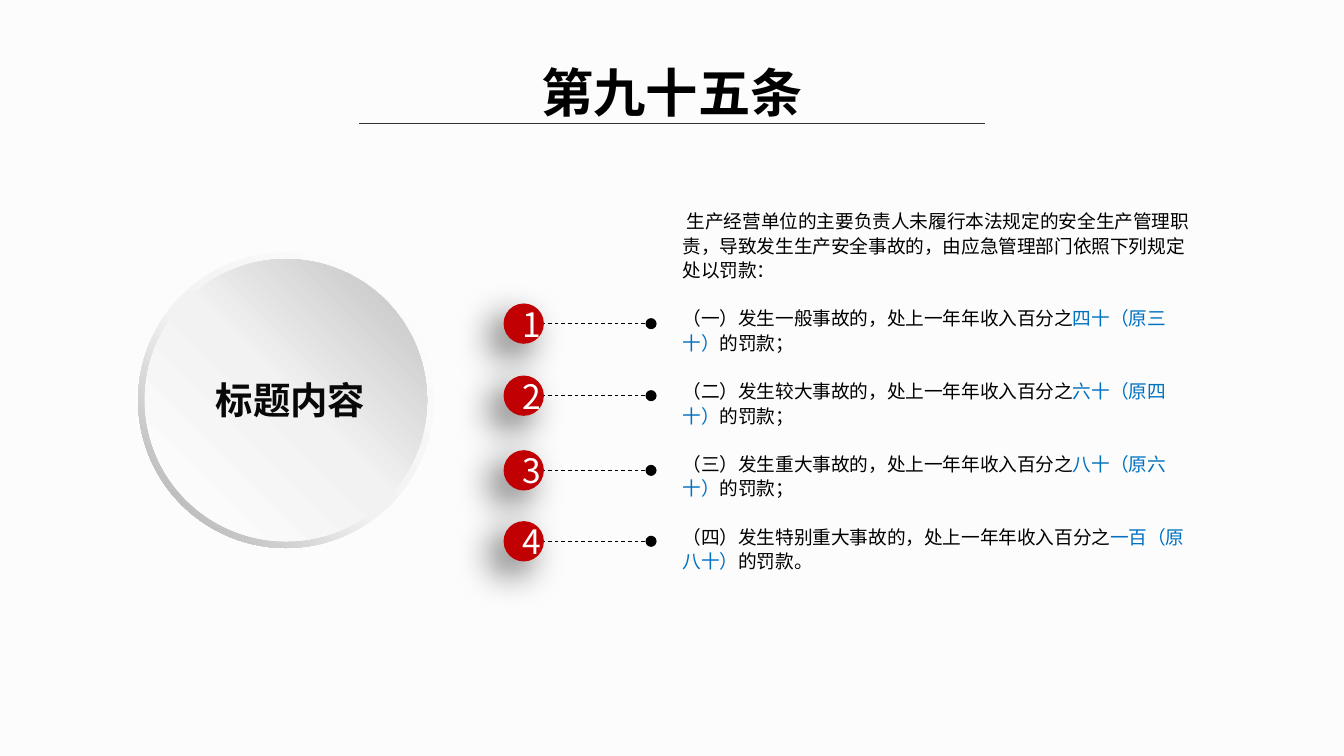
import pptx
import pptx.util
import pptx.dml.color
import pptx.enum.dml
import pptx.enum.shapes
import pptx.enum.text
import pptx.oxml
import pptx.oxml.ns
import lxml.etree

Pt = pptx.util.Pt
qn = pptx.oxml.ns.qn
Shape = pptx.enum.shapes.MSO_SHAPE
Align = pptx.enum.text.PP_ALIGN
FONT = "Noto Sans CJK SC"
COLORS = {
    "back": "FCFCFC", "text": "000000", "label": "080808", "rule": "333333",
    "red": "C00002", "blue": "0070C0", "white": "FFFFFF",
    "pale": "F2F2F2", "gray": "A6A6A6", "silver": "BFBFBF",
}

LEAD = "生产经营单位的主要负责人未履行本法规定的安全生产管理职责，导致发生生产安全事故的，由应急管理部门依照下列规定处以罚款："
# Case, fine, closing mark
FINES = [
    ("（一）发生一般事故的", "四十（原三十）", "；"),
    ("（二）发生较大事故的", "六十（原四十）", "；"),
    ("（三）发生重大事故的", "八十（原六十）", "；"),
    ("（四）发生特别重大事故的", "一百（原八十）", "。"),
]


def color(name):
    return pptx.dml.color.RGBColor.from_string(COLORS[name])


def style(run, size, hue, bold=False):
    font = run.font
    font.size, font.bold, font.name = Pt(size), bold, FONT
    font.color.rgb = color(hue)
    east = lxml.etree.SubElement(font._element, qn("a:ea"))
    east.set("typeface", FONT)


def add_text(slide, box, inset=0):
    frame = slide.shapes.add_textbox(*map(Pt, box)).text_frame
    frame.word_wrap = True
    frame.auto_size = pptx.enum.text.MSO_AUTO_SIZE.SHAPE_TO_FIT_TEXT
    frame.margin_left = frame.margin_right = Pt(2 * inset)
    frame.margin_top = frame.margin_bottom = Pt(inset)
    return frame


def add_label(frame, text, size, hue, bold=False):
    para = frame.paragraphs[0]
    para.text = text
    para.alignment = Align.CENTER
    style(para.runs[0], size, hue, bold)


def add_line(slide, start, end, hue, width):
    kind = pptx.enum.shapes.MSO_CONNECTOR.STRAIGHT
    line = slide.shapes.add_connector(kind, *map(Pt, start + end))
    line.line.color.rgb = color(hue)
    line.line.width = Pt(width)
    lxml.etree.SubElement(line._element.spPr, qn("a:effectLst"))
    return line


def shade(shape, stops, angle):
    """Fill a shape with a linear gradient, angle clockwise in degrees."""
    marks = "".join(
        f'<a:gs pos="{pos * 1000}"><a:srgbClr val="{COLORS[hue]}"/></a:gs>'
        for pos, hue in stops)
    grad = pptx.oxml.parse_xml(
        f'<a:gradFill {pptx.oxml.ns.nsdecls("a")} rotWithShape="1">'
        f'<a:gsLst>{marks}</a:gsLst>'
        f'<a:lin ang="{angle * 60000}" scaled="0"/></a:gradFill>')
    shape._element.spPr.find(qn("a:prstGeom")).addnext(grad)
    shape.line.fill.background()
    shape.shadow.inherit = False


def add_title(slide, box):
    left, top, width, height = box
    frame = add_text(slide, (left + 34.5, top, width - 69, height), 3.6)
    add_label(frame, "第九十五条", 28, "text", True)
    base = top + 37.5
    add_line(slide, (left, base), (left + width, base), "rule", 0.75)


def add_disc(slide, box):
    left, top, size, _ = box
    group = slide.shapes.add_group_shape()
    ring = group.shapes.add_shape(Shape.DONUT, *map(Pt, box))
    ring.adjustments[0] = 0.049
    shade(ring, [(0, "white"), (55, "pale"), (100, "gray")], 135)
    inner = (left + 3.6, top + 3.6, size - 7.2, size - 7.2)
    face = group.shapes.add_shape(Shape.OVAL, *map(Pt, inner))
    shade(face, [(0, "white"), (51, "pale"), (100, "silver")], 315)
    frame = add_text(slide, (left + 26.6, top + 67, 110, 24.5))
    add_label(frame, "标题内容", 20, "label", True)


def add_badge(slide, box, num):
    left, top, size, _ = box
    # Dashed leader ending in a dot
    mid = top + size / 2
    line = add_line(slide, (left + 16.6, mid), (left + 79, mid), "text", 0.5)
    line.line.dash_style = pptx.enum.dml.MSO_LINE.DASH
    tail = lxml.etree.SubElement(line.line._get_or_add_ln(), qn("a:tailEnd"))
    tail.set("type", "oval")
    # Numbered ball with a soft shadow
    ball = slide.shapes.add_shape(Shape.OVAL, *map(Pt, box))
    ball.fill.solid()
    ball.fill.fore_color.rgb = color("red")
    ball.line.fill.background()
    ball.shadow.inherit = False
    ball._element.spPr.find(qn("a:effectLst")).append(pptx.oxml.parse_xml(
        f'<a:outerShdw {pptx.oxml.ns.nsdecls("a")} blurRad="{Pt(20)}" '
        f'dist="{Pt(10)}" dir="8100000" algn="tr" rotWithShape="0">'
        f'<a:srgbClr val="{COLORS["text"]}"><a:alpha val="60000"/></a:srgbClr>'
        '</a:outerShdw>'))
    ball.text_frame.vertical_anchor = pptx.enum.text.MSO_ANCHOR.MIDDLE
    add_label(ball.text_frame, str(num), 18, "white")


def add_body(slide, box):
    frame = add_text(slide, box)
    paras = [[(" ", "text", True), (LEAD, "text", False)]]
    for case, fine, mark in FINES:
        paras.append([(case + "，处上一年年收入百分之", "text", False),
                      (fine, "blue", False),
                      ("的罚款" + mark, "text", False)])
    for i, parts in enumerate(paras):
        para = frame.add_paragraph() if i else frame.paragraphs[0]
        para.line_spacing = Pt(13)
        if i:
            para.space_before = Pt(13)
        for text, hue, bold in parts:
            run = para.add_run()
            run.text = text
            style(run, 10, hue, bold)


def main():
    deck = pptx.Presentation()
    deck.slide_width, deck.slide_height = Pt(720), Pt(405)
    slide = deck.slides.add_slide(deck.slide_layouts[6])
    slide.background.fill.solid()
    slide.background.fill.fore_color.rgb = color("back")

    add_title(slide, (192.5, 28.8, 335, 41))
    add_disc(slide, (74, 135.2, 158.4, 158.4))
    add_body(slide, (365.6, 111.6, 272.5, 195.8))
    for num, top in enumerate((162.6, 201.2, 241.2, 279.2), 1):
        add_badge(slide, (269.8, top, 21.6, 21.6), num)
    deck.save("out.pptx")


if __name__ == "__main__":
    main()
